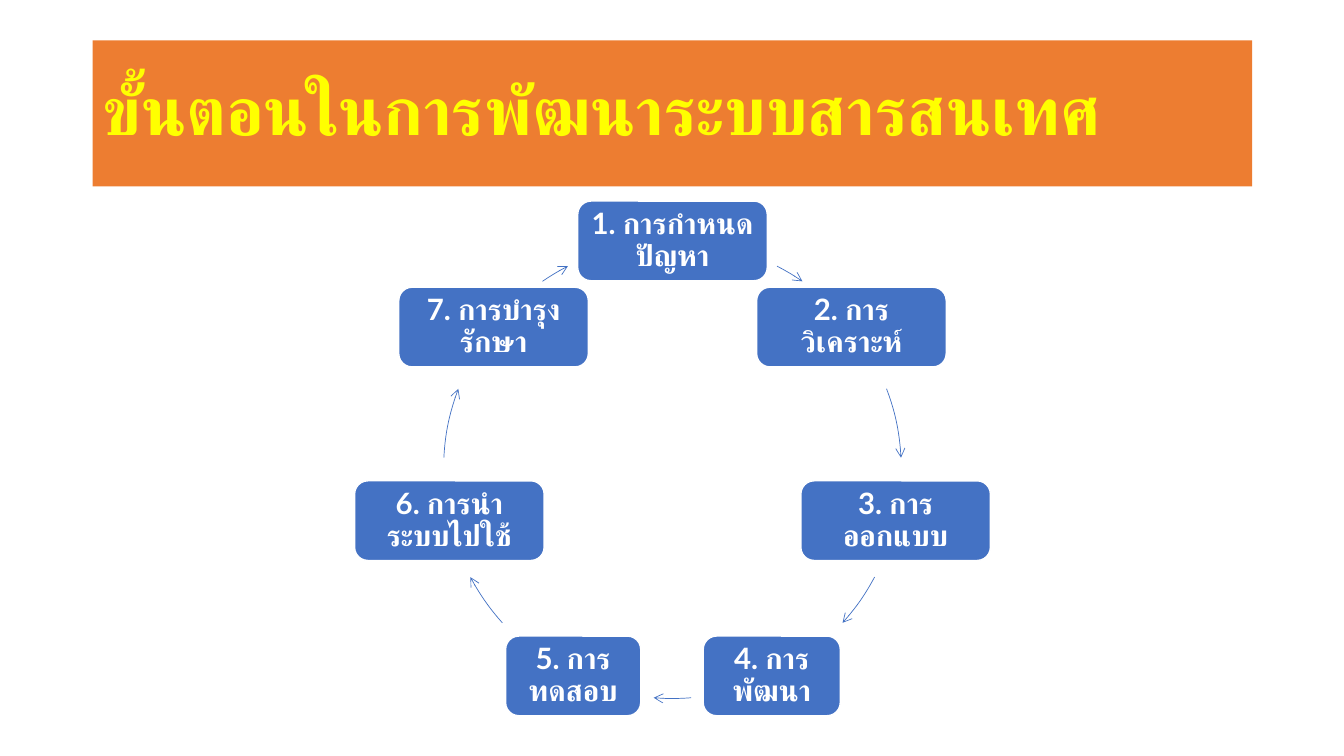
import math

import pptx
import pptx.dml.color
import pptx.enum.lang
import pptx.enum.shapes
import pptx.enum.text
import pptx.oxml
import pptx.oxml.ns
import pptx.util

Inches = pptx.util.Inches
Pt = pptx.util.Pt
SHAPES = pptx.enum.shapes.MSO_SHAPE
ALIGN = pptx.enum.text.PP_ALIGN

COLORS = {"banner": "ED7D31", "title": "FFFF00", "step": "4472C4", "white": "FFFFFF"}

# Ring of steps: centre, radius and box height in inches
CENTER_X, CENTER_Y, RADIUS = 6.67, 4.66, 2.27
STEP_HEIGHT = 0.79

# Step text and box width, clockwise from the top
STEPS = [
    ("1. การกำหนดปัญหา", 1.88),
    ("2. การวิเคราะห์", 1.88),
    ("3. การออกแบบ", 1.88),
    ("4. การพัฒนา", 1.36),
    ("5. การทดสอบ", 1.34),
    ("6. การนำระบบไปใช้", 1.88),
    ("7. การบำรุงรักษา", 1.88),
]
# Start and end of each arrow, in degrees clockwise from the top
ARROWS = [(27.2, 34.6), (69.3, 87), (118, 132), (175.3, 184.7),
          (228, 242), (273, 290.7), (325.4, 332.8)]


def color(name):
    return pptx.dml.color.RGBColor.from_string(COLORS[name])


def write_text(box, text, size, ink, align=ALIGN.LEFT, inset=0.1):
    frame = box.text_frame
    frame.word_wrap = True
    frame.vertical_anchor = pptx.enum.text.MSO_ANCHOR.MIDDLE
    frame.margin_left = frame.margin_right = Inches(inset)
    frame.margin_top = frame.margin_bottom = Inches(0.05)
    para = frame.paragraphs[0]
    para.alignment = align
    para.line_spacing = 0.9
    span = para.add_run()
    span.text = text
    span.font.size = Pt(size)
    span.font.bold = True
    span.font.name = "Lato"
    span.font.color.rgb = color(ink)
    span.font.language_id = pptx.enum.lang.MSO_LANGUAGE_ID.THAI
    # Thai letters take the complex-script font
    script_font = pptx.oxml.parse_xml(
        f'<a:cs {pptx.oxml.ns.nsdecls("a")} typeface="Lato"/>')
    span.font._element.append(script_font)


class SlideBuilder:
    def __init__(self, page):
        self.page = page

    def shape(self, kind, left, top, width, height):
        box = self.page.shapes.add_shape(
            kind, Inches(left), Inches(top), Inches(width), Inches(height))
        box.shadow.inherit = False
        return box

    def banner(self, text):
        box = self.shape(SHAPES.RECTANGLE, 0.92, 0.4, 11.5, 1.45)
        box.fill.solid()
        box.fill.fore_color.rgb = color("banner")
        box.line.fill.background()
        write_text(box, text, 48, "title")

    def step(self, text, width, angle):
        x = CENTER_X + RADIUS * math.sin(math.radians(angle))
        y = CENTER_Y - RADIUS * math.cos(math.radians(angle))
        box = self.shape(SHAPES.ROUNDED_RECTANGLE, x - width / 2,
                         y - STEP_HEIGHT / 2, width, STEP_HEIGHT)
        box.fill.solid()
        box.fill.fore_color.rgb = color("step")
        box.line.color.rgb = color("white")
        box.line.width = Pt(1)
        # The rounded corners already inset the text a little
        write_text(box, text, 21, "white", align=ALIGN.CENTER, inset=0.08)

    def arrow(self, start, end):
        arc = self.shape(SHAPES.ARC, CENTER_X - RADIUS, CENTER_Y - RADIUS,
                         2 * RADIUS, 2 * RADIUS)
        # Arc angles run from three o'clock in 1/60000 degree; 1.0 is 100000 units
        for index, angle in enumerate((start, end)):
            arc.adjustments[index] = (angle - 90) % 360 * 0.6
        arc.fill.background()
        arc.line.color.rgb = color("step")
        arc.line.width = Pt(0.5)
        head = pptx.oxml.parse_xml(
            f'<a:tailEnd {pptx.oxml.ns.nsdecls("a")} type="arrow"/>')
        arc.line._get_or_add_ln().append(head)


def main():
    deck = pptx.Presentation()
    deck.slide_width, deck.slide_height = Inches(13.33), Inches(7.5)
    builder = SlideBuilder(deck.slides.add_slide(deck.slide_layouts[6]))

    # Title
    builder.banner("ขั้นตอนในการพัฒนาระบบสารสนเทศ")

    # Cycle of steps and arrows
    for index, ((text, width), (start, end)) in enumerate(zip(STEPS, ARROWS)):
        builder.step(text, width, index * 360 / len(STEPS))
        builder.arrow(start, end)

    deck.save("out.pptx")


if __name__ == "__main__":
    main()
